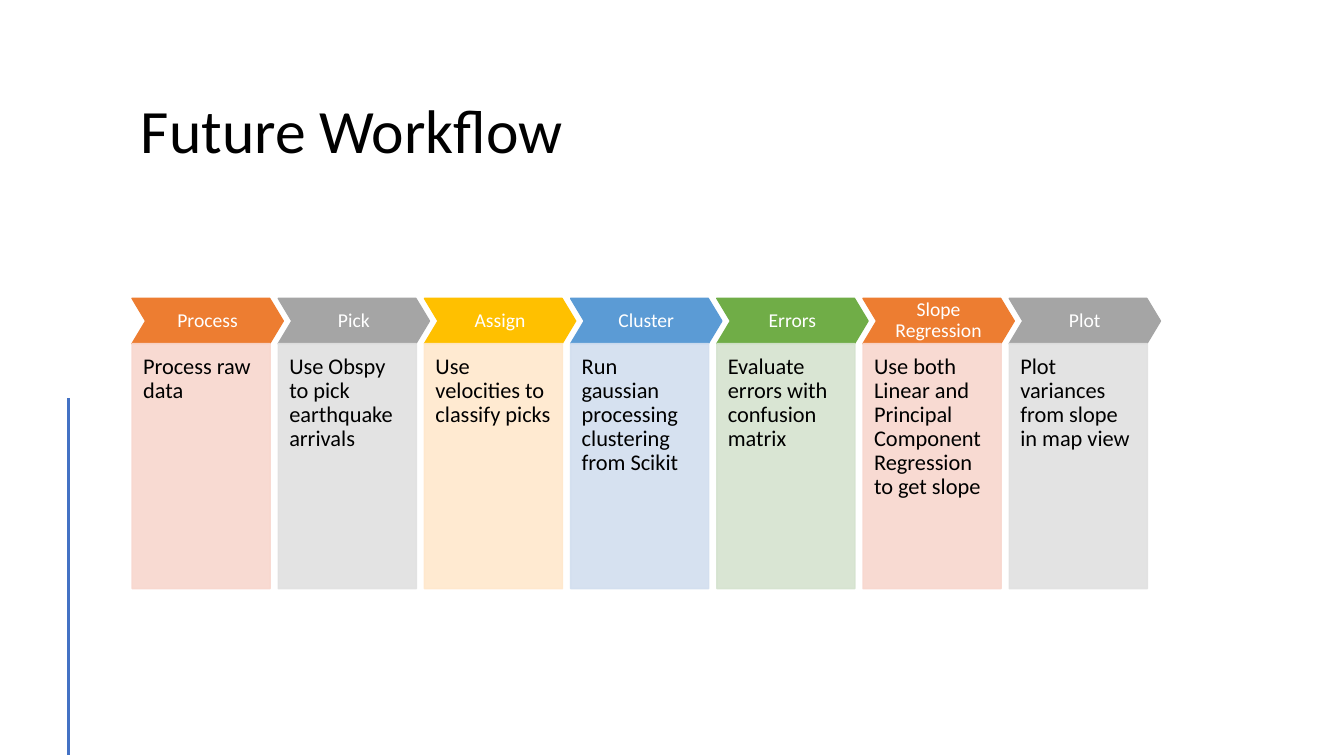
import pptx
import pptx.dml.color
import pptx.enum.shapes
import pptx.enum.text
import pptx.oxml
import pptx.oxml.ns
import pptx.util
from pptx.util import Inches

RGBColor = pptx.dml.color.RGBColor
MSO_SHAPE = pptx.enum.shapes.MSO_SHAPE
MSO_ANCHOR = pptx.enum.text.MSO_ANCHOR
PP_ALIGN = pptx.enum.text.PP_ALIGN

BLACK = RGBColor(0x00, 0x00, 0x00)
WHITE = RGBColor(0xFF, 0xFF, 0xFF)
ACCENT = RGBColor(0x44, 0x72, 0xC4)
ORANGE = RGBColor(0xED, 0x7D, 0x31)
GRAY = RGBColor(0xA5, 0xA5, 0xA5)
GOLD = RGBColor(0xFF, 0xC0, 0x00)
BLUE = RGBColor(0x5B, 0x9B, 0xD5)
GREEN = RGBColor(0x70, 0xAD, 0x47)
TINTS = {
    ORANGE: RGBColor(0xF8, 0xD7, 0xCE),
    GRAY: RGBColor(0xE1, 0xE1, 0xE1),
    GOLD: RGBColor(0xFF, 0xE8, 0xCC),
    BLUE: RGBColor(0xD2, 0xDE, 0xEF),
    GREEN: RGBColor(0xD5, 0xE3, 0xCF),
}

STEPS = [
    ("Process", "Process raw data", ORANGE),
    ("Pick", "Use Obspy to pick earthquake arrivals", GRAY),
    ("Assign", "Use velocities to classify picks", GOLD),
    ("Cluster", "Run gaussian processing clustering from Scikit", BLUE),
    ("Errors", "Evaluate errors with confusion matrix", GREEN),
    ("Slope Regression",
     "Use both Linear and Principal Component Regression to get slope", ORANGE),
    ("Plot", "Plot variances from slope in map view", GRAY),
]
FIRST_LEFT, STEP_PITCH = 1.31, 1.45
HEADER_TOP, HEADER_WIDTH, HEADER_HEIGHT = 2.96, 1.5, 0.45
DETAIL_WIDTH, DETAIL_HEIGHT = 1.37, 2.43


def write_text(shape, text, size, color, align, anchor, insets):
    """Fill the shape with one paragraph; insets are left, top, right, bottom."""
    frame = shape.text_frame
    frame.word_wrap = True
    frame.vertical_anchor = anchor
    (frame.margin_left, frame.margin_top,
     frame.margin_right, frame.margin_bottom) = map(Inches, insets)
    paragraph = frame.paragraphs[0]
    paragraph.text = text
    paragraph.alignment = align
    paragraph.line_spacing = 0.9
    paragraph.font.name = "Calibri"
    paragraph.font.size = pptx.util.Pt(size)
    paragraph.font.color.rgb = color


def add_block(slide, preset, left, top, width, height, color):
    block = slide.shapes.add_shape(
        preset, Inches(left), Inches(top), Inches(width), Inches(height))
    block.shadow.inherit = False
    block.fill.solid()
    block.fill.fore_color.rgb = color
    block.line.color.rgb = color
    block.line.width = pptx.util.Pt(1)
    return block


def set_opacity(shape, percent):
    """Apply the opacity to both fill and outline."""
    for color in shape.element.spPr.iter(pptx.oxml.ns.qn("a:srgbClr")):
        color.append(pptx.oxml.parse_xml(
            f'<a:alpha {pptx.oxml.ns.nsdecls("a")} val="{percent * 1000}"/>'))


def add_step(slide, left, name, detail, color):
    header = add_block(slide, MSO_SHAPE.CHEVRON, left, HEADER_TOP,
                       HEADER_WIDTH, HEADER_HEIGHT, color)
    header.adjustments[0] = 0.3
    write_text(header, name, 14, WHITE, PP_ALIGN.CENTER, MSO_ANCHOR.MIDDLE,
               (0.06, 0.06, 0.06, 0.06))

    panel = add_block(slide, MSO_SHAPE.RECTANGLE, left, HEADER_TOP + HEADER_HEIGHT,
                      DETAIL_WIDTH, DETAIL_HEIGHT, TINTS[color])
    set_opacity(panel, 90)
    write_text(panel, detail, 16, BLACK, PP_ALIGN.LEFT, MSO_ANCHOR.TOP,
               (0.11, 0.11, 0.11, 0.22))


def add_title(slide, text):
    title = slide.shapes.add_textbox(
        Inches(1.3), Inches(0.95), Inches(10.23), Inches(1.31))
    write_text(title, text, 44, BLACK, PP_ALIGN.LEFT, MSO_ANCHOR.TOP,
               (0.1, 0.05, 0.1, 0.05))


def add_side_rule(slide):
    rule = slide.shapes.add_connector(
        pptx.enum.shapes.MSO_CONNECTOR.STRAIGHT,
        Inches(0.68), Inches(3.95), Inches(0.68), Inches(7.49))
    rule.line.color.rgb = ACCENT
    rule.line.width = pptx.util.Pt(2)
    rule.element.spPr.append(pptx.oxml.parse_xml(
        f'<a:effectLst {pptx.oxml.ns.nsdecls("a")}/>'))


def main():
    deck = pptx.Presentation()
    deck.slide_width = Inches(13.33)
    deck.slide_height = Inches(7.5)
    slide = deck.slides.add_slide(deck.slide_layouts[6])

    add_title(slide, "Future Workflow")
    add_side_rule(slide)
    for index, (name, detail, color) in enumerate(STEPS):
        add_step(slide, FIRST_LEFT + index * STEP_PITCH, name, detail, color)

    deck.save("out.pptx")


if __name__ == "__main__":
    main()
